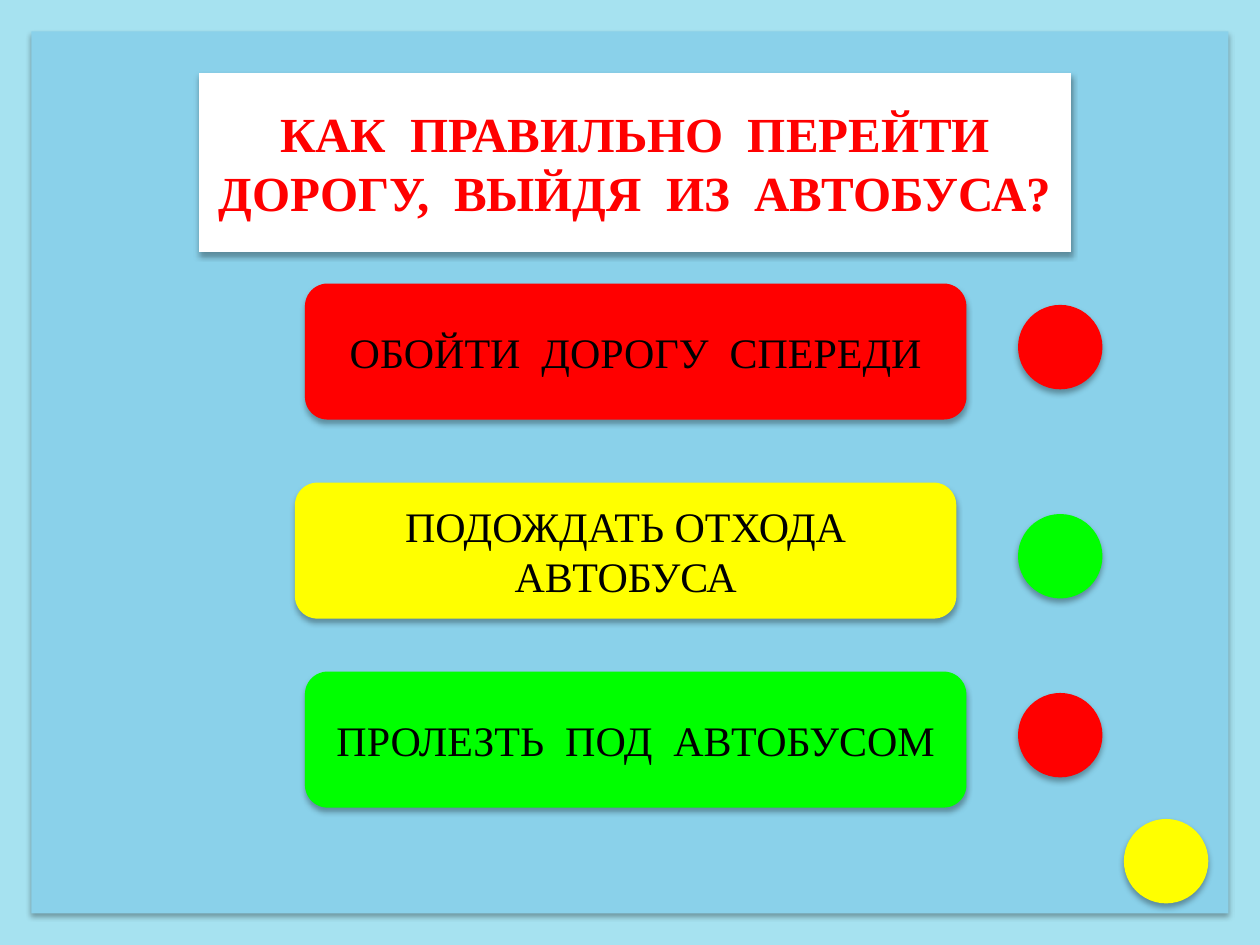
import pptx
import pptx.util
import pptx.oxml
import pptx.oxml.ns
from pptx.dml.color import RGBColor
from pptx.enum.shapes import MSO_SHAPE
from pptx.enum.text import MSO_ANCHOR, PP_ALIGN
from pptx.util import Inches

COLORS = {
    "background": "C7EEFC", "frame": "A6E2F0", "panel": "8AD1EA",
    "white": "FFFFFF", "black": "000000",
    "red": "FF0000", "yellow": "FFFF00", "green": "00FF00",
}
FONT = "Times New Roman"

# Content
QUESTION = "КАК  ПРАВИЛЬНО  ПЕРЕЙТИ ДОРОГУ,  ВЫЙДЯ  ИЗ  АВТОБУСА?"
# text, card colour, left, top, signal colour, signal top
ANSWERS = [
    ("ОБОЙТИ  ДОРОГУ  СПЕРЕДИ", "red", 2.42, 2.25, "red", 2.42),
    ("ПОДОЖДАТЬ ОТХОДА АВТОБУСА", "yellow", 2.34, 3.83, "green", 4.08),
    ("ПРОЛЕЗТЬ  ПОД  АВТОБУСОМ", "green", 2.42, 5.33, "red", 5.5),
]
CARD_WIDTH, CARD_HEIGHT = 5.25, 1.08
SIGNAL_LEFT, SIGNAL_SIZE = 8.08, 0.67
SLIDE_WIDTH, SLIDE_HEIGHT, MARGIN = 10, 7.5, 0.25

SHADOW = (
    f'<a:outerShdw {pptx.oxml.ns.nsdecls("a")} blurRad="{pptx.util.Pt(3.5)}" '
    f'dist="{pptx.util.Pt(2.2)}" dir="5400000" rotWithShape="0">'
    '<a:srgbClr val="000000"><a:alpha val="32000"/></a:srgbClr></a:outerShdw>'
)


def add_block(slide, preset, left, top, width, height, color):
    block = slide.shapes.add_shape(
        preset, Inches(left), Inches(top), Inches(width), Inches(height))
    block.fill.solid()
    block.fill.fore_color.rgb = RGBColor.from_string(COLORS[color])
    block.line.fill.background()
    block.shadow.inherit = False
    effects = block._element.spPr.find(pptx.oxml.ns.qn("a:effectLst"))
    effects.append(pptx.oxml.parse_xml(SHADOW))
    return block


def write(block, text, size, color, bold=False):
    frame = block.text_frame
    frame.text = text
    frame.word_wrap = True
    frame.vertical_anchor = MSO_ANCHOR.MIDDLE
    paragraph = frame.paragraphs[0]
    paragraph.alignment = PP_ALIGN.CENTER
    font = paragraph.runs[0].font
    font.name = FONT
    font.size = pptx.util.Pt(size)
    font.bold = bold
    font.color.rgb = RGBColor.from_string(COLORS[color])


def main():
    deck = pptx.Presentation()
    deck.slide_width, deck.slide_height = Inches(SLIDE_WIDTH), Inches(SLIDE_HEIGHT)
    slide = deck.slides.add_slide(deck.slide_layouts[6])

    # Background, frame and panel
    slide.background.fill.solid()
    slide.background.fill.fore_color.rgb = RGBColor.from_string(COLORS["background"])
    for inset, color in ((0, "frame"), (MARGIN, "panel")):
        add_block(slide, MSO_SHAPE.RECTANGLE, inset, inset,
                  SLIDE_WIDTH - 2 * inset, SLIDE_HEIGHT - 2 * inset, color)

    # Question
    question = add_block(slide, MSO_SHAPE.RECTANGLE, 1.58, 0.58, 6.92, 1.42, "white")
    write(question, QUESTION, 28, "red", bold=True)

    # Answers, each with its signal light
    for text, color, left, top, signal_color, signal_top in ANSWERS:
        card = add_block(slide, MSO_SHAPE.ROUNDED_RECTANGLE, left, top,
                         CARD_WIDTH, CARD_HEIGHT, color)
        write(card, text, 24, "black")
        add_block(slide, MSO_SHAPE.OVAL, SIGNAL_LEFT, signal_top,
                  SIGNAL_SIZE, SIGNAL_SIZE, signal_color)

    # Corner button
    add_block(slide, MSO_SHAPE.OVAL, 8.92, 6.5, SIGNAL_SIZE, SIGNAL_SIZE, "yellow")

    deck.save("out.pptx")


if __name__ == "__main__":
    main()
